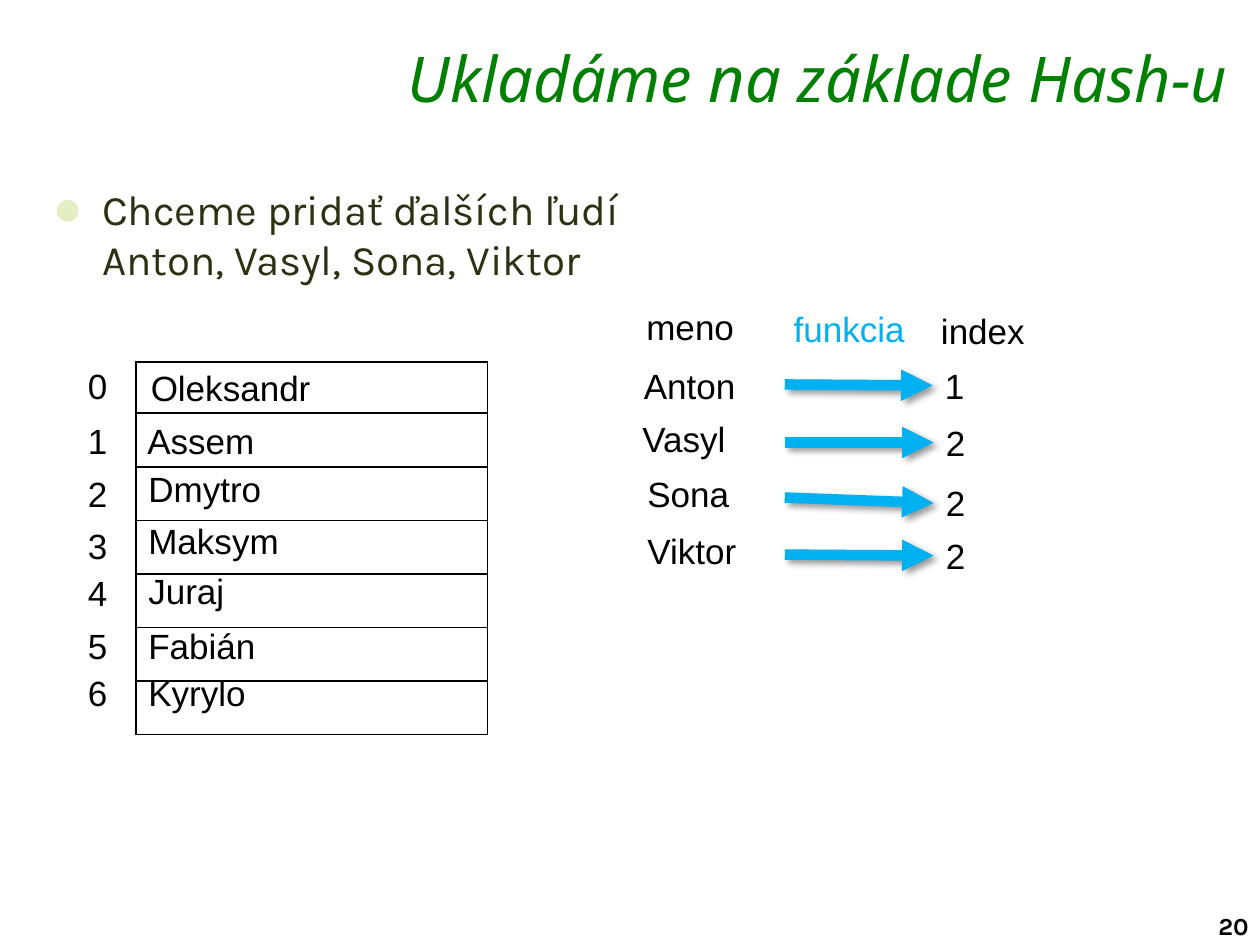
import pptx
import pptx.util
import pptx.dml.color
import pptx.enum.shapes
import pptx.enum.text
import pptx.oxml
import pptx.oxml.ns
from lxml import etree
from pptx.util import Cm

COLORS = {
    "title": "008000",
    "body": "2B3212",
    "bullet": "E5EEC2",
    "black": "000000",
    "white": "FFFFFF",
    "accent": "00B0F0",
}
LINE_HEIGHT = 1.12
DIGIT_WIDTH = 0.91
ARROW_LEFT, ARROW_RIGHT = 15.82, 18.82

# slot top, name, name left, name top, name width
SLOTS = [
    (7.21, "Oleksandr", 2.79, 7.26, 3.76),
    (8.33, "Assem", 2.72, 8.33, 2.69),
    (9.4, "Dmytro", 2.74, 9.3, 2.79),
    (10.44, "Maksym", 2.74, 10.34, 3.18),
    (11.4, "Juraj", 2.74, 11.35, 2.06),
    (12.45, "Fabián", 2.74, 12.45, 2.69),
    (13.41, "Kyrylo", 2.74, 13.41, 2.49),
]
# name, name left, name top, name width, arrow top, index, index left, index top
MAPPINGS = [
    ("Anton", 12.73, 7.21, 2.36, 7.75, "1", 18.8, 7.21),
    ("Vasyl", 12.7, 8.28, 2.21, 8.92, "2", 18.82, 8.36),
    ("Sona", 12.8, 9.4, 2.18, 10.03, "2", 18.82, 9.58),
    ("Viktor", 12.8, 10.54, 2.31, 11.18, "2", 18.82, 10.64),
]
# text, left, top, width, color
HEADINGS = [
    ("meno", 12.78, 6.02, 2.29, "black"),
    ("funkcia", 15.75, 6.07, 2.77, "accent"),
    ("index", 18.72, 6.1, 2.21, "black"),
]


def rgb(name):
    return pptx.dml.color.RGBColor.from_string(COLORS[name])


def child(parent, tag, **attributes):
    """Append a DrawingML element to parent."""
    return etree.SubElement(parent, pptx.oxml.ns.qn(tag), attributes)


def add_text(page, text, left, top, width, height=LINE_HEIGHT, *, size=20, font="Arial",
             color="black", bold=False, italic=False, align="LEFT", wrap=False,
             inset_top=0.13, bullet=False):
    box = page.shapes.add_textbox(Cm(left), Cm(top), Cm(width), Cm(height))
    frame = box.text_frame
    frame.word_wrap = wrap
    frame.margin_top = Cm(inset_top)
    para = frame.paragraphs[0]
    para.text = text
    para.alignment = getattr(pptx.enum.text.PP_ALIGN, align)
    if bullet:
        add_bullet(para)
    for span in para.runs:
        span.font.size = pptx.util.Pt(size)
        span.font.name = font
        span.font.bold = bold
        span.font.italic = italic
        span.font.color.rgb = rgb(color)
    return box


def add_bullet(para):
    properties = para._p.get_or_add_pPr()
    properties.set("marL", str(Cm(1)))
    properties.set("indent", str(-Cm(1)))
    bullet_color = child(properties, "a:buClr")
    child(bullet_color, "a:srgbClr", val=COLORS["bullet"])
    child(properties, "a:buSzPct", val="120000")
    child(properties, "a:buFont", typeface="Arial")
    child(properties, "a:buChar", char="●")


def add_cell_borders(cell):
    properties = cell._tc.get_or_add_tcPr()
    for position, side in enumerate(("a:lnL", "a:lnR", "a:lnT", "a:lnB")):
        border = child(properties, side, w=str(pptx.util.Pt(1)))
        child(child(border, "a:solidFill"), "a:srgbClr", val=COLORS["black"])
        properties.insert(position, border)


def add_slot_table(page):
    heights = [1.03] + [1.08] * (len(SLOTS) - 1)
    table = page.shapes.add_table(len(SLOTS), 1, Cm(2.74), Cm(7.3),
                                  Cm(7.09), Cm(sum(heights))).table
    table.first_row = False
    table.horz_banding = False
    for row, height in zip(table.rows, heights):
        row.height = Cm(height)
        cell = row.cells[0]
        cell.fill.solid()
        cell.fill.fore_color.rgb = rgb("white")
        add_cell_borders(cell)


def add_arrow(page, top, target):
    """Draw a shadowed arrow that ends at the left side of target."""
    arrow = page.shapes.add_connector(pptx.enum.shapes.MSO_CONNECTOR.STRAIGHT,
                                      Cm(ARROW_LEFT), Cm(top), Cm(ARROW_RIGHT), Cm(top))
    arrow.end_connect(target, 1)
    arrow.line.width = pptx.util.Pt(6)
    arrow.line.color.rgb = rgb("accent")
    child(arrow.line._get_or_add_ln(), "a:tailEnd", type="triangle")
    effects = child(arrow._element.spPr, "a:effectLst")
    shadow = child(effects, "a:outerShdw", blurRad=str(pptx.util.Pt(4)),
                   dist=str(pptx.util.Pt(3)), dir="2700000", algn="tl", rotWithShape="0")
    shade = child(shadow, "a:srgbClr", val=COLORS["black"])
    child(shade, "a:alpha", val="40000")


def main():
    deck = pptx.Presentation()
    deck.slide_width, deck.slide_height = Cm(25.4), Cm(19.05)
    page = deck.slides.add_slide(deck.slide_layouts[6])

    add_text(page, "20", 24.31, 18.24, 1.3, 0.84, size=14, font="Karla", bold=True, wrap=True)
    add_text(page, "Ukladáme na základe Hash-u", 5.82, 0.79, 19.17, 1.47, size=36,
             font="Noto Sans", color="title", italic=True, align="RIGHT", wrap=True, inset_top=0)
    add_text(page, "Chceme pridať ďalších ľudí\nAnton, Vasyl, Sona, Viktor", 0.81, 3.56, 23.83,
             3.18, size=24, font="Karla", color="body", wrap=True, bullet=True)

    add_slot_table(page)
    for index, (slot_top, name, left, top, width) in enumerate(SLOTS):
        add_text(page, str(index), 1.52, slot_top, DIGIT_WIDTH)
        add_text(page, name, left, top, width)

    for text, left, top, width, color in HEADINGS:
        add_text(page, text, left, top, width, color=color)
    for name, left, top, width, arrow_top, index, index_left, index_top in MAPPINGS:
        add_text(page, name, left, top, width)
        index_box = add_text(page, index, index_left, index_top, DIGIT_WIDTH)
        add_arrow(page, arrow_top, index_box)

    deck.save("out.pptx")


if __name__ == "__main__":
    main()
